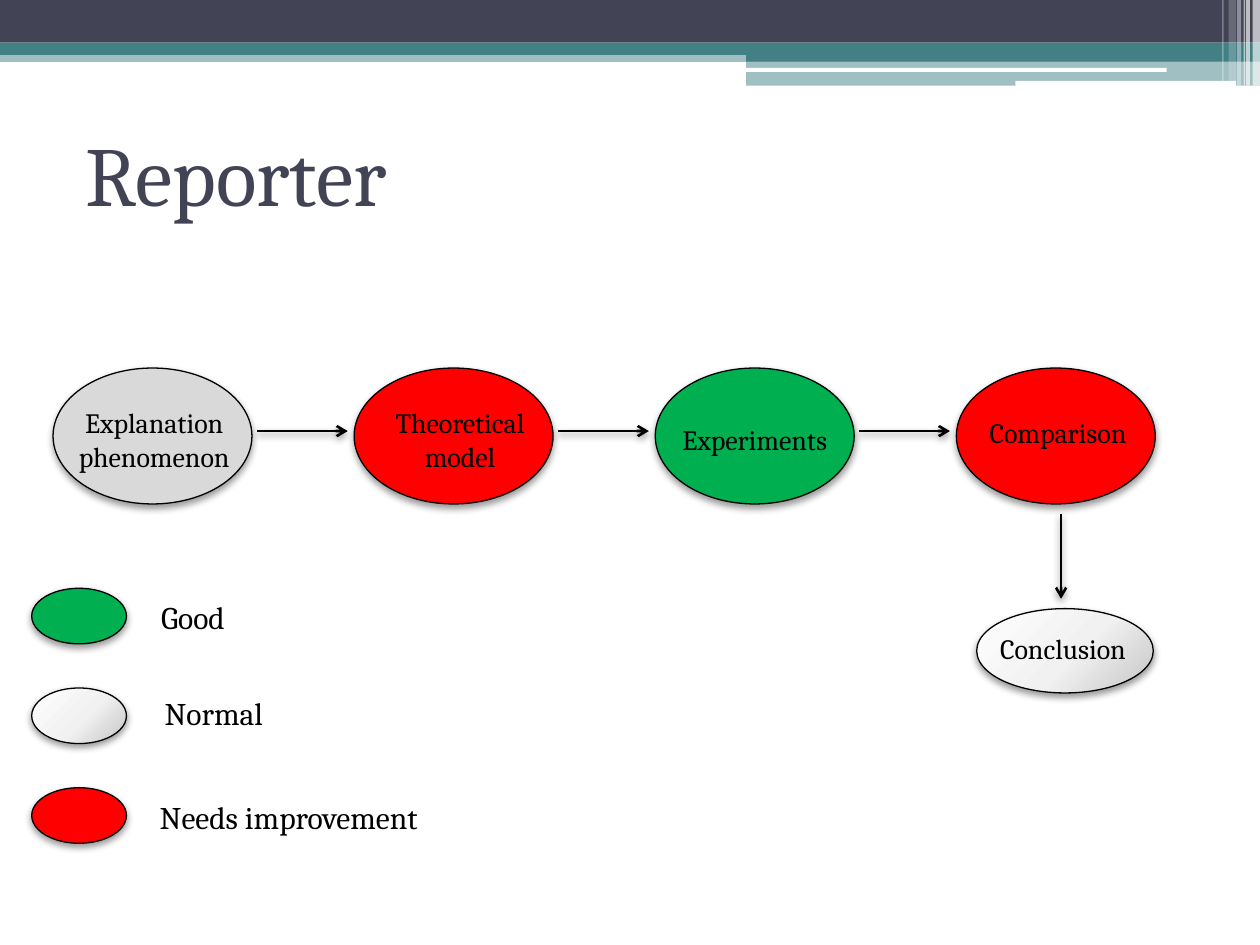
from dataclasses import dataclass

from lxml.etree import SubElement
from pptx import Presentation
from pptx.dml.color import RGBColor
from pptx.enum.shapes import MSO_CONNECTOR as Connector, MSO_SHAPE as Shape
from pptx.enum.text import MSO_ANCHOR as Anchor, PP_ALIGN as Align
from pptx.oxml import parse_xml
from pptx.oxml.ns import nsdecls, qn
from pptx.util import Cm, Pt


@dataclass(frozen=True)
class Theme:
    font: str = "Cambria"
    navy: str = "424456"
    teal: str = "438086"
    white: str = "FFFFFF"
    ink: str = "000000"
    grey: str = "D9D9D9"
    good: str = "00B050"
    poor: str = "FF0000"
    normal: tuple = ((0, "FEFEFE"), (55, "F1F1F1"), (100, "C5C5C5"))
    title_size: int = 48
    step_size: int = 16
    legend_size: int = 18
    outline: float = 0.75
    arrow: float = 1.5


@dataclass(frozen=True)
class Box:
    left: float
    top: float
    width: float
    height: float

    def inner(self, dx, dy, width, height):
        return Box(self.left + dx, self.top + dy, width, height)

    def lengths(self):
        return [Cm(v) for v in (self.left, self.top, self.width, self.height)]


THEME = Theme()


def colour(value):
    return RGBColor.from_string(value)


def add_shadow(item):
    item._element.spPr.append(parse_xml(
        f'<a:effectLst {nsdecls("a")}><a:outerShdw blurRad="52070" dist="25400" '
        f'dir="5400000" rotWithShape="0"><a:srgbClr val="{THEME.ink}">'
        '<a:alpha val="40000"/></a:srgbClr></a:outerShdw></a:effectLst>'))


def add_bar(slide, box, fill, opacity=100, kind=Shape.RECTANGLE):
    bar = slide.shapes.add_shape(kind, *box.lengths())
    bar.shadow.inherit = False
    bar.line.fill.background()
    bar.fill.solid()
    bar.fill.fore_color.rgb = colour(fill)
    if opacity < 100:
        rgb = bar._element.spPr.find(qn("a:solidFill")).find(qn("a:srgbClr"))
        SubElement(rgb, qn("a:alpha")).set("val", str(opacity * 1000))


def add_ellipse(slide, box, fill):
    ellipse = slide.shapes.add_shape(Shape.OVAL, *box.lengths())
    ellipse.line.color.rgb = colour(THEME.ink)
    ellipse.line.width = Pt(THEME.outline)
    if fill == THEME.normal:
        stops = "".join(f'<a:gs pos="{place * 1000}"><a:srgbClr val="{tint}"/></a:gs>'
                        for place, tint in fill)
        ellipse._element.spPr.find(qn("a:prstGeom")).addnext(parse_xml(
            f'<a:gradFill {nsdecls("a")} rotWithShape="1"><a:gsLst>{stops}</a:gsLst>'
            '<a:path path="circle"><a:fillToRect l="-40000" t="-90000" '
            'r="140000" b="190000"/></a:path></a:gradFill>'))
    else:
        ellipse.fill.solid()
        ellipse.fill.fore_color.rgb = colour(fill)
    add_shadow(ellipse)


def style_text(frame, text, size, ink, align):
    frame.word_wrap = True
    frame.text = text
    paragraph = frame.paragraphs[0]
    paragraph.alignment = align
    paragraph.font.name = THEME.font
    paragraph.font.size = Pt(size)
    paragraph.font.color.rgb = colour(ink)


def add_label(slide, box, text, size, align=Align.CENTER):
    label = slide.shapes.add_textbox(*box.lengths())
    style_text(label.text_frame, text, size, THEME.ink, align)


def add_arrow(slide, x1, y1, x2, y2):
    arrow = slide.shapes.add_connector(
        Connector.STRAIGHT, Cm(x1), Cm(y1), Cm(x2), Cm(y2))
    arrow.line.color.rgb = colour(THEME.ink)
    arrow.line.width = Pt(THEME.arrow)
    outline = arrow._element.spPr.find(qn("a:ln"))
    SubElement(outline, qn("a:tailEnd")).set("type", "arrow")
    add_shadow(arrow)


def build_band(slide, box):
    bars = (
        (0, 1.02, 25.4, 0.23, THEME.teal, 50),
        (0, 0, 25.4, 0.86, THEME.navy, 100),
        (0, 0.86, 25.4, 0.25, THEME.teal, 100),
        (15.04, 0.99, 10.36, 0.25, THEME.teal, 100),
        (15.04, 1.22, 10.36, 0.51, THEME.teal, 50),
    )
    for *place, fill, opacity in bars:
        add_bar(slide, box.inner(*place), fill, opacity)
    for place in ((15.01, 1.37, 8.51, 0.08), (20.47, 1.63, 4.45, 0.1)):
        add_bar(slide, box.inner(*place), THEME.white, kind=Shape.ROUNDED_RECTANGLE)
    stripes = (
        (25.25, 0.15, 1.73, 65), (25.12, 0.08, 1.73, 65), (25.07, 0.03, 1.73, 60),
        (24.94, 0.08, 1.73, 40), (24.77, 0.15, 1.63, 20), (24.64, 0.03, 1.63, 30),
    )
    for dx, width, height, opacity in stripes:
        add_bar(slide, box.inner(dx, 0, width, height), THEME.white, opacity)


def build_title(slide, box, text):
    title = slide.shapes.title
    title.left, title.top, title.width, title.height = box.lengths()
    title.text_frame.vertical_anchor = Anchor.MIDDLE
    style_text(title.text_frame, text, THEME.title_size, THEME.navy, Align.LEFT)


def build_flow(slide, box):
    steps = (
        ("Explanation phenomenon", THEME.grey, (0.07, 0.64, 3.94, 1.63)),
        ("Theoretical model", THEME.poor, (0.41, 0.64, 3.45, 1.63)),
        ("Experiments", THEME.good, (0, 0.97, 4.01, 0.94)),
        ("Comparison", THEME.poor, (0.12, 0.84, 3.86, 0.94)),
    )
    width, height, gap = 4.01, 2.74, 2.06
    for index, (text, fill, label) in enumerate(steps):
        step = box.inner(index * (width + gap), 0, width, height)
        add_ellipse(slide, step, fill)
        add_label(slide, step.inner(*label), text, THEME.step_size)
        if index < len(steps) - 1:
            start, y = step.left + width + 0.1, step.top + 1.27
            add_arrow(slide, start, y, start + 1.83, y)
    conclusion = box.inner(18.62, 4.85, 3.56, 1.7)
    add_ellipse(slide, conclusion, THEME.normal)
    add_label(slide, conclusion.inner(-0.09, 0.33, 3.66, 0.94), "Conclusion",
              THEME.step_size)
    x = conclusion.left + 1.7
    add_arrow(slide, x, conclusion.top - 1.91, x, conclusion.top - 0.2)


def build_legend(slide, box):
    entries = (
        ("Good", THEME.good, (2.36, 0.08, 2.72, 1.02)),
        ("Normal", THEME.normal, (2.43, 0, 5.18, 1.02)),
        ("Needs improvement", THEME.poor, (2.33, 0.08, 9.53, 1.02)),
    )
    for index, (text, fill, label) in enumerate(entries):
        key = box.inner(0, index * 2.01, 1.91, 1.12)
        add_ellipse(slide, key, fill)
        add_label(slide, key.inner(*label), text, THEME.legend_size, Align.LEFT)


def main():
    deck = Presentation()
    deck.slide_width, deck.slide_height = Cm(25.4), Cm(19.05)
    slide = deck.slides.add_slide(deck.slide_layouts[5])
    build_band(slide, Box(0, 0, 25.4, 1.73))
    build_title(slide, Box(1.47, 2.34, 20.96, 2.31), "Reporter")
    build_flow(slide, Box(1.07, 7.42, 22.22, 6.55))
    build_legend(slide, Box(0.64, 11.86, 11.86, 5.14))
    deck.save("out.pptx")


if __name__ == "__main__":
    main()
